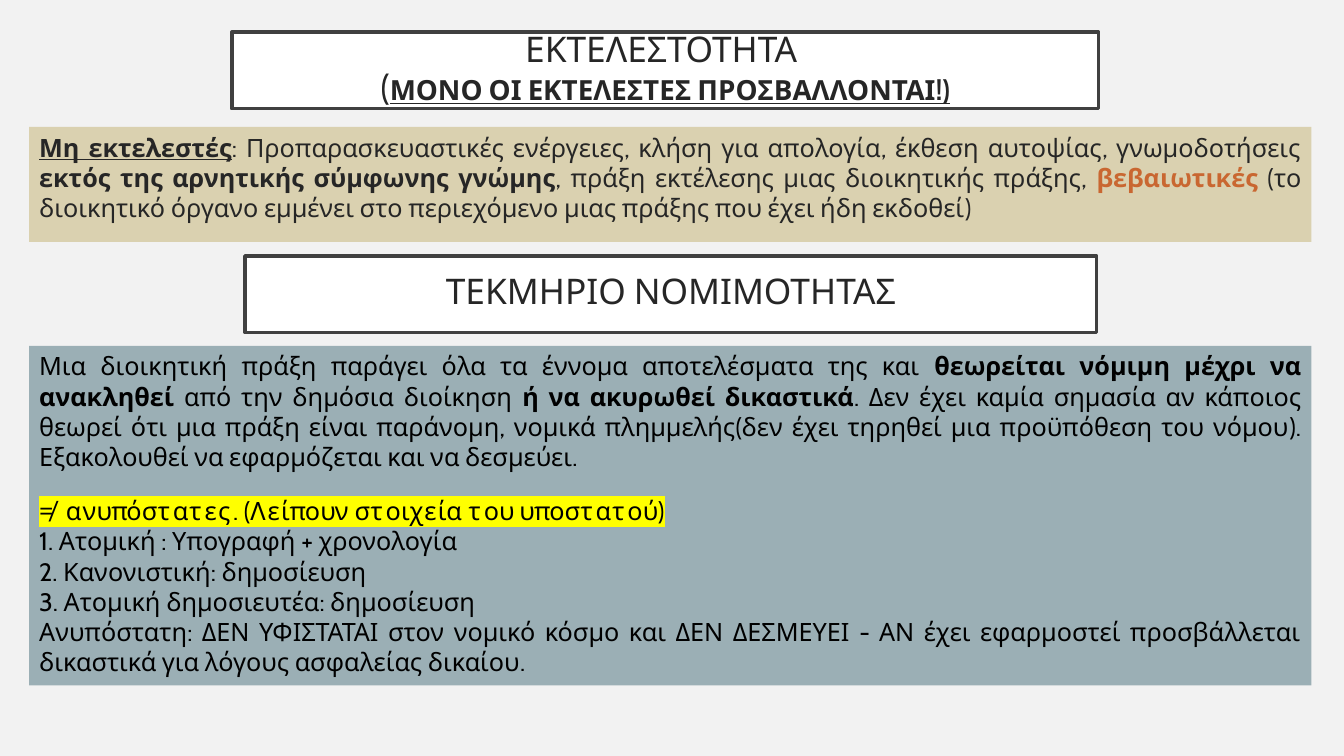
from dataclasses import dataclass

from lxml import etree
from pptx import Presentation
from pptx.dml.color import RGBColor
from pptx.enum.shapes import MSO_SHAPE
from pptx.enum.text import MSO_ANCHOR, MSO_AUTO_SIZE, PP_ALIGN
from pptx.oxml.ns import qn
from pptx.util import Pt

RECTANGLE = MSO_SHAPE.RECTANGLE
TOP, MIDDLE = MSO_ANCHOR.TOP, MSO_ANCHOR.MIDDLE
CENTER, JUSTIFY = PP_ALIGN.CENTER, PP_ALIGN.JUSTIFY
NO_AUTOFIT = MSO_AUTO_SIZE.NONE
TITLE_ONLY = 5


@dataclass(frozen=True)
class Theme:
    font: str = "Cabin"
    background: str = "F2F2F2"
    heading_fill: str = "FFFFFF"
    heading_line: str = "404040"
    sand: str = "DAD1B0"
    slate: str = "9BAFB5"
    dark: str = "262626"
    black: str = "000000"
    accent: str = "C96731"
    highlight: str = "FFFF00"
    heading_size: float = 25.2
    subheading_size: float = 19.8
    body_size: float = 18


theme = Theme()


def format_box(shape, fill, line, anchor, margins):
    shape.fill.solid()
    shape.fill.fore_color.rgb = RGBColor.from_string(fill)
    if line:
        shape.line.color.rgb = RGBColor.from_string(line)
        shape.line.width = Pt(2.5)
    else:
        shape.line.fill.background()
    frame = shape.text_frame
    frame.word_wrap = True
    frame.auto_size = NO_AUTOFIT
    frame.vertical_anchor = anchor
    frame.margin_left = frame.margin_right = Pt(margins[0])
    frame.margin_top = frame.margin_bottom = Pt(margins[1])


def format_paragraph(paragraph, alignment, size, color, spacing=1.0):
    paragraph.alignment = alignment
    paragraph.line_spacing = spacing
    paragraph.space_before = paragraph.space_after = Pt(0)
    paragraph.font.name = theme.font
    paragraph.font.size = Pt(size)
    paragraph.font.color.rgb = RGBColor.from_string(color)


presentation = Presentation()
presentation.slide_width, presentation.slide_height = Pt(960), Pt(540)
slide = presentation.slides.add_slide(presentation.slide_layouts[TITLE_ONLY])
slide.background.fill.solid()
slide.background.fill.fore_color.rgb = RGBColor.from_string(theme.background)

# Title
title = slide.shapes.title
title.left, title.top, title.width, title.height = Pt(165.6), Pt(23), Pt(619.2), Pt(54.7)
format_box(title, theme.heading_fill, theme.heading_line, MIDDLE, (14.4, 14.4))
paragraph = title.text_frame.paragraphs[0]
format_paragraph(paragraph, CENTER, theme.heading_size, theme.dark, 0.9)
paragraph.add_run().text = "ΕΚΤΕΛΕΣΤΟΤΗΤΑ "
paragraph.add_line_break()
paragraph.add_run().text = "("
run = paragraph.add_run()
run.text = "ΜΟΝΟ ΟΙ ΕΚΤΕΛΕΣΤΕΣ ΠΡΟΣΒΑΛΛΟΝΤΑΙ!)"
run.font.size = Pt(theme.subheading_size)
run.font.bold = run.font.underline = True

# Second heading
heading = slide.shapes.add_shape(RECTANGLE, Pt(175), Pt(182.9), Pt(608.4), Pt(54.7))
heading.shadow.inherit = False
format_box(heading, theme.heading_fill, theme.heading_line, MIDDLE, (14.4, 14.4))
paragraph = heading.text_frame.paragraphs[0]
paragraph.text = "ΤΕΚΜΗΡΙΟ ΝΟΜΙΜΟΤΗΤΑΣ"
format_paragraph(paragraph, CENTER, theme.heading_size, theme.dark, 0.8)

# Body panels: each paragraph is a list of (text, styles)
non_enforceable = [
    [
        ("Μη εκτελεστές", "bold underline"),
        (": Προπαρασκευαστικές ενέργειες, κλήση για απολογία, έκθεση αυτοψίας, γνωμοδοτήσεις ", ""),
        ("εκτός της αρνητικής σύμφωνης γνώμης", "bold"),
        (", πράξη εκτέλεσης μιας διοικητικής πράξης, ", ""),
        ("βεβαιωτικές", "bold accent"),
        (" (το διοικητικό όργανο εμμένει στο περιεχόμενο μιας πράξης που έχει ήδη εκδοθεί)", ""),
    ],
]
legality = [
    [
        ("Μια διοικητική πράξη παράγει όλα τα έννομα αποτελέσματα της και ", ""),
        ("θεωρείται νόμιμη μέχρι να ανακληθεί ", "bold"),
        ("από την δημόσια διοίκηση ", ""),
        ("ή να ακυρωθεί δικαστικά", "bold"),
        (". Δεν έχει καμία σημασία αν κάποιος θεωρεί ότι μια πράξη είναι παράνομη, νομικά "
         "πλημμελής(δεν έχει τηρηθεί μια προϋπόθεση του νόμου). Εξακολουθεί να εφαρμόζεται "
         "και να δεσμεύει.", ""),
    ],
    [("≠ ανυπόστατες. (Λείπουν στοιχεία του υποστατού)", "highlight")],
    [("1. Ατομική : Υπογραφή + χρονολογία", "")],
    [("2. Κανονιστική: δημοσίευση", "")],
    [("3. Ατομική δημοσιευτέα: δημοσίευση", "")],
    [("Ανυπόστατη: ΔΕΝ ΥΦΙΣΤΑΤΑΙ στον νομικό κόσμο και ΔΕΝ ΔΕΣΜΕΥΕΙ - ΑΝ έχει εφαρμοστεί "
      "προσβάλλεται δικαστικά για λόγους ασφαλείας δικαίου.", "")],
]
panels = [
    (90.7, 82.1, theme.sand, theme.dark, non_enforceable),
    (247, 242.6, theme.slate, theme.black, legality),
]
for top, height, fill, color, paragraphs in panels:
    panel = slide.shapes.add_shape(RECTANGLE, Pt(20.9), Pt(top), Pt(915.8), Pt(height))
    panel.shadow.inherit = False
    format_box(panel, fill, None, TOP, (7.2, 3.6))
    frame = panel.text_frame
    for index, pieces in enumerate(paragraphs):
        paragraph = frame.add_paragraph() if index else frame.paragraphs[0]
        format_paragraph(paragraph, JUSTIFY, theme.body_size, color)
        for text, styles in pieces:
            run = paragraph.add_run()
            run.text = text
            if "bold" in styles:
                run.font.bold = True
            if "underline" in styles:
                run.font.underline = True
            if "accent" in styles:
                run.font.color.rgb = RGBColor.from_string(theme.accent)
            if "highlight" in styles:
                paragraph.space_before = Pt(17)
                mark = etree.SubElement(run.font._element, qn("a:highlight"))
                etree.SubElement(mark, qn("a:srgbClr"), val=theme.highlight)

presentation.save("out.pptx")
